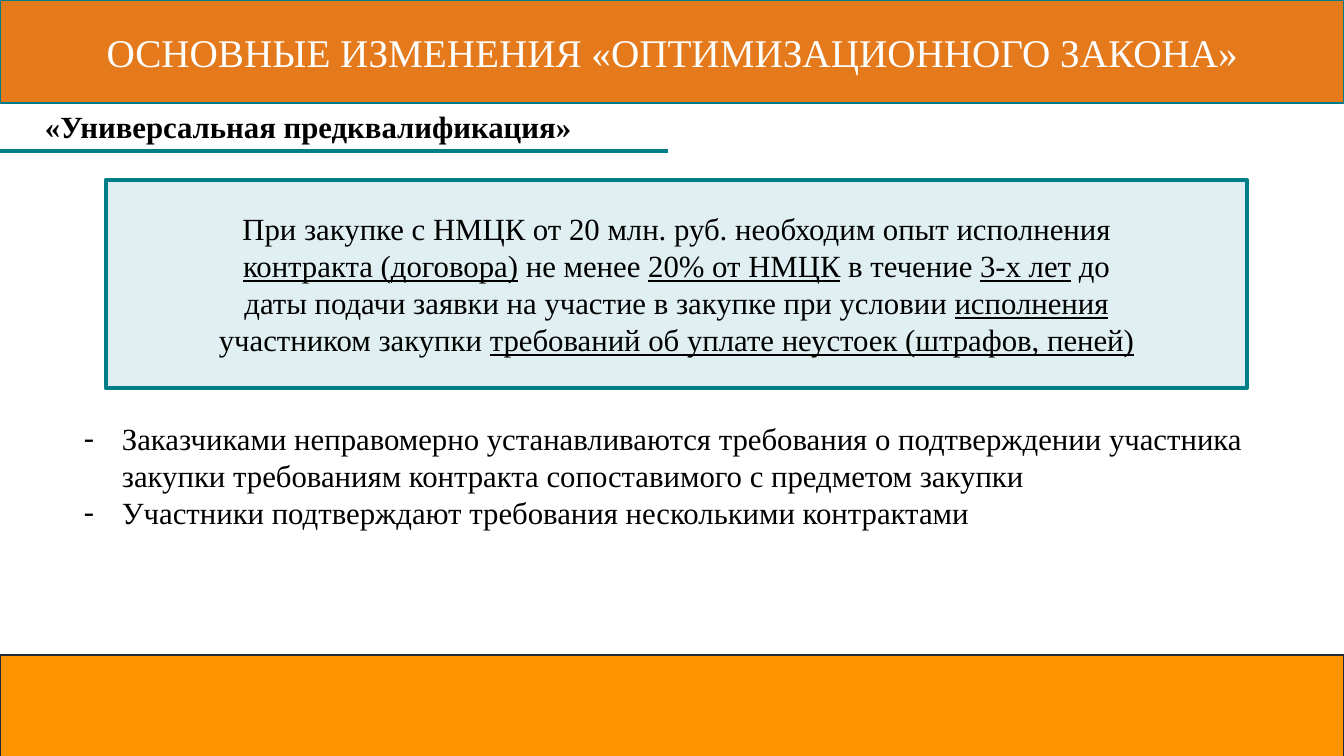
from lxml.etree import SubElement
from pptx import Presentation
from pptx.dml.color import RGBColor
from pptx.enum.shapes import MSO_CONNECTOR as Connector, MSO_SHAPE as Shape
from pptx.enum.text import MSO_ANCHOR as Anchor, MSO_AUTO_SIZE as AutoSize, PP_ALIGN as Align
from pptx.oxml.ns import qn
from pptx.util import Pt

SLIDE_WIDTH, SLIDE_HEIGHT = 1344, 756
EMU_PER_PX = 12192000 / SLIDE_WIDTH
FONT = "Times New Roman"
TEAL, ORANGE, AMBER, PALE = "007E88", "E57A1C", "FF9300", "E0EFF1"
NAVY, WHITE, BLACK = "222A35", "FFFFFF", "000000"
BODY_SIZE, TITLE_SIZE = 22, 28
INDENT = 38

TITLE = "ОСНОВНЫЕ ИЗМЕНЕНИЯ «ОПТИМИЗАЦИОННОГО ЗАКОНА»"
SUBTITLE = "«Универсальная предквалификация»"
RULE_RUNS = [
    ("При закупке с НМЦК от 20 млн. руб. необходим опыт исполнения ", False),
    ("контракта (договора)", True),
    (" не менее ", False),
    ("20% от НМЦК", True),
    (" в течение ", False),
    ("3-х лет", True),
    (" до даты подачи заявки на участие в закупке при условии ", False),
    ("исполнения", True),
    (" участником закупки ", False),
    ("требований об уплате неустоек (штрафов, пеней)", True),
]
PROBLEMS = [
    "Заказчиками неправомерно устанавливаются требования о подтверждении участника "
    "закупки требованиям контракта сопоставимого с предметом закупки",
    "Участники подтверждают требования несколькими контрактами",
]

HEADER_BOX = (0, 0, SLIDE_WIDTH, 103)
SUBTITLE_BOX = (35, 107, 1309, 44)
UNDERLINE = (0, 151, 668, 151)
RULE_BOX = (106, 180, 1141, 208)
PROBLEMS_BOX = (74, 415, 1194, 122)
FOOTER_BOX = (0, 655, SLIDE_WIDTH, 103)


def px(*lengths):
    return [round(length * EMU_PER_PX) for length in lengths]


def color(value):
    return RGBColor.from_string(value)


def paint(shape, fill, line, width):
    shape.fill.solid()
    shape.fill.fore_color.rgb = color(fill)
    shape.line.color.rgb = color(line)
    shape.line.width = Pt(width)


def add_box(slide, kind, box, fill, line, width):
    shape = slide.shapes.add_shape(kind, *px(*box))
    shape.shadow.inherit = False
    paint(shape, fill, line, width)
    return shape


def add_text_box(slide, box):
    frame = slide.shapes.add_textbox(*px(*box)).text_frame
    frame.word_wrap = True
    return frame


def add_run(paragraph, text, size=BODY_SIZE, ink=BLACK, bold=False, underline=False):
    run = paragraph.add_run()
    run.text = text
    font = run.font
    font.name, font.size, font.bold, font.underline = FONT, Pt(size), bold, underline
    font.color.rgb = color(ink)


def add_dash(paragraph):
    properties = paragraph._p.get_or_add_pPr()
    indent = px(INDENT)[0]
    properties.set("marL", str(indent))
    properties.set("indent", str(-indent))
    SubElement(properties, qn("a:buFont"), typeface=FONT)
    SubElement(properties, qn("a:buChar"), char="-")


def add_header(slide):
    title = slide.shapes.title
    title.left, title.top, title.width, title.height = px(*HEADER_BOX)
    paint(title, ORANGE, TEAL, 1)
    frame = title.text_frame
    frame.auto_size = AutoSize.NONE
    frame.vertical_anchor = Anchor.MIDDLE
    paragraph = frame.paragraphs[0]
    paragraph.alignment = Align.CENTER
    add_run(paragraph, TITLE, TITLE_SIZE, WHITE)


def add_subtitle(slide):
    paragraph = add_text_box(slide, SUBTITLE_BOX).paragraphs[0]
    paragraph.line_spacing = 0.9
    add_run(paragraph, SUBTITLE, bold=True)
    underline = slide.shapes.add_connector(Connector.STRAIGHT, *px(*UNDERLINE))
    underline.line.color.rgb = color(TEAL)
    underline.line.width = Pt(3)
    SubElement(underline._element.spPr, qn("a:effectLst"))


def add_rule(slide):
    shape = add_box(slide, Shape.PARALLELOGRAM, RULE_BOX, PALE, TEAL, 3)
    shape.adjustments[0] = 0
    frame = shape.text_frame
    frame.word_wrap = True
    frame.vertical_anchor = Anchor.MIDDLE
    paragraph = frame.paragraphs[0]
    paragraph.alignment = Align.CENTER
    for text, underline in RULE_RUNS:
        add_run(paragraph, text, underline=underline)


def add_problems(slide):
    frame = add_text_box(slide, PROBLEMS_BOX)
    frame.auto_size = AutoSize.SHAPE_TO_FIT_TEXT
    for index, text in enumerate(PROBLEMS):
        paragraph = frame.add_paragraph() if index else frame.paragraphs[0]
        add_dash(paragraph)
        add_run(paragraph, text)


def main():
    presentation = Presentation()
    presentation.slide_width, presentation.slide_height = px(SLIDE_WIDTH, SLIDE_HEIGHT)
    slide = presentation.slides.add_slide(presentation.slide_layouts[5])
    add_header(slide)
    add_subtitle(slide)
    add_rule(slide)
    add_problems(slide)
    add_box(slide, Shape.RECTANGLE, FOOTER_BOX, AMBER, NAVY, 1)
    presentation.save("out.pptx")


if __name__ == "__main__":
    main()
